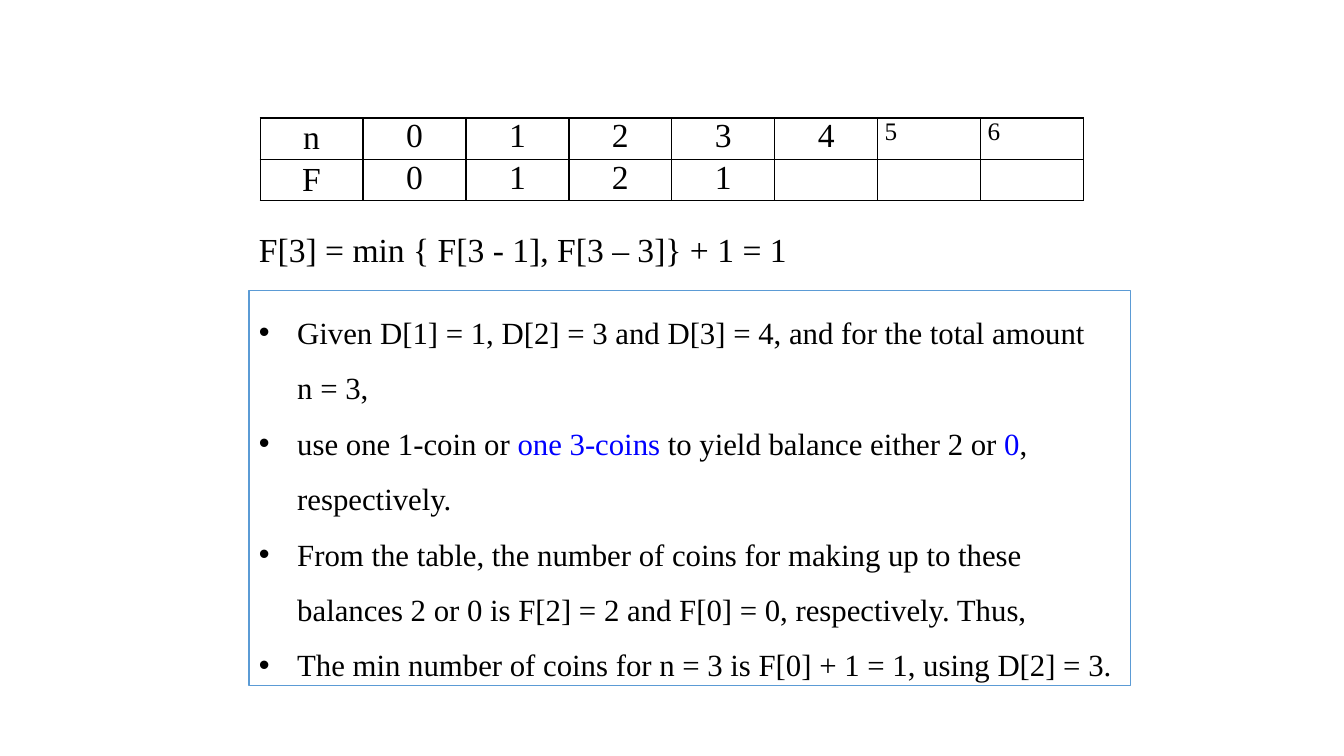
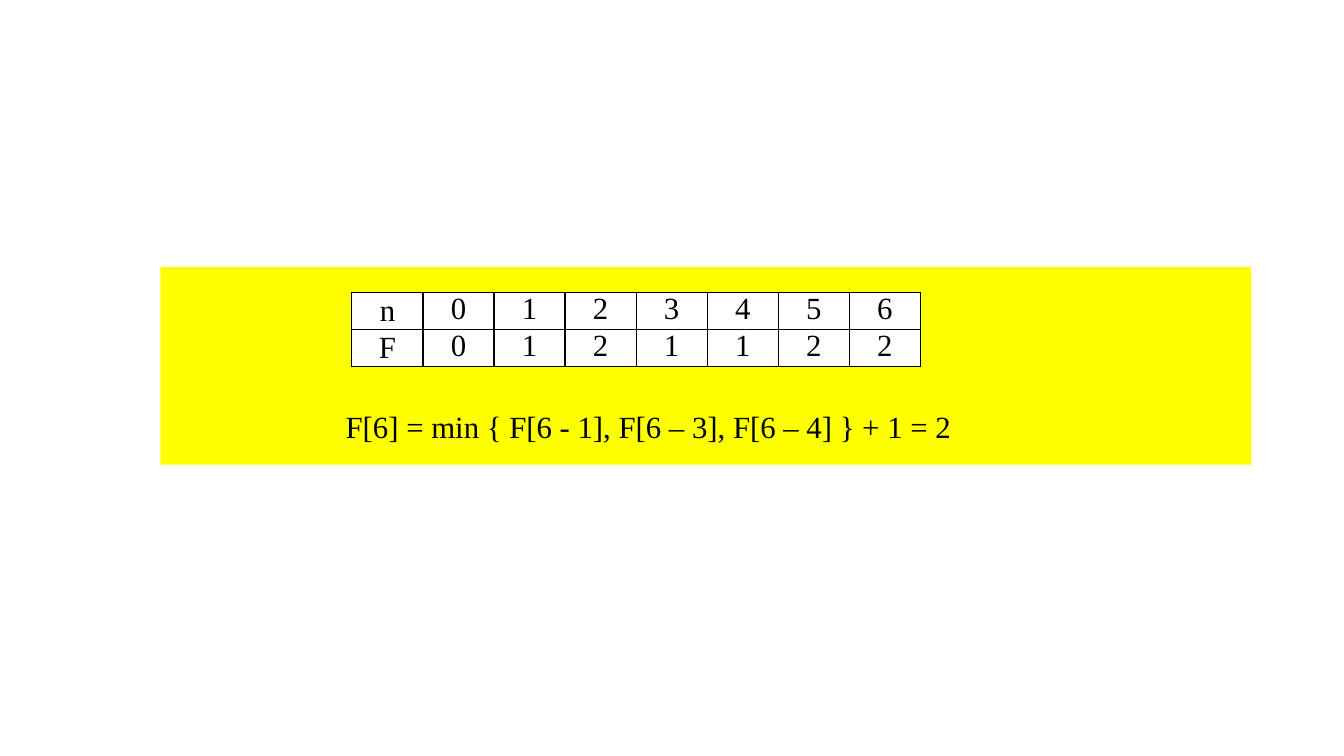
from lxml import etree
from pptx import Presentation
from pptx import util as u
from pptx.dml.color import RGBColor
from pptx.enum import shapes, text
from pptx.oxml import ns

PX = 9144
FONT = "Times New Roman"
BLACK = RGBColor(0, 0, 0)
WHITE = RGBColor(255, 255, 255)
BLUE = RGBColor(0, 0, 255)
YELLOW = RGBColor(255, 255, 0)
FRAME_BLUE = RGBColor(0x5B, 0x9B, 0xD5)

TOP, MIDDLE = text.MSO_ANCHOR.TOP, text.MSO_ANCHOR.MIDDLE
LEFT, CENTER = text.PP_ALIGN.LEFT, text.PP_ALIGN.CENTER
CELL_FORMAT = {"margin_left": 7 * PX, "margin_right": 7 * PX,
               "margin_top": 0, "margin_bottom": 0}
PLAIN_TABLE = {"first_row": False, "horz_banding": False}

AMOUNTS = ["n", *"0123456"]
REASONING = [
    [("Given D[1] = 1, D[2] = 3 and D[3] = 4, and for the total amount\nn = 3,", BLACK)],
    [("use one 1-coin or ", BLACK), ("one 3-coins ", BLUE),
     ("to yield balance either 2 or ", BLACK), ("0", BLUE), (", respectively.", BLACK)],
    [("From the table, the number of coins for making up to these balances "
      "2 or 0 is F[2] = 2 and F[0] = 0, respectively. Thus,", BLACK)],
    [("The min number of coins for n = 3 is F[0] + 1 = 1, using D[2] = 3.", BLACK)],
]


def apply(target, values):
    """Set each attribute of the target from a dict."""
    for name, value in values.items():
        setattr(target, name, value)


def emu(*lengths):
    """Turn px lengths into EMU."""
    return [u.Emu(length * PX) for length in lengths]


def write(paragraph, words, size, colour=BLACK):
    """Add words to a paragraph, with a line break at each newline."""
    for number, line in enumerate(words.split("\n")):
        if number:
            paragraph.add_line_break()
        run = paragraph.add_run()
        run.text = line
        apply(run.font, {"name": FONT, "size": u.Pt(size)})
        run.font.color.rgb = colour


def add_borders(cell):
    """Draw a thin black line on all sides of a cell."""
    properties = cell._tc.get_or_add_tcPr()
    for side in ("a:lnL", "a:lnR", "a:lnT", "a:lnB"):
        line = etree.SubElement(properties, ns.qn(side), w=str(u.Pt(1)))
        fill = etree.SubElement(line, ns.qn("a:solidFill"))
        etree.SubElement(fill, ns.qn("a:srgbClr"), val=str(BLACK))


def add_coin_table(slide, box, counts, size, pending=()):
    """Place the table of minimum coin counts; pending amounts are small and left."""
    rows = [AMOUNTS, ["F", *counts]]
    left, top, width, height = box
    table = slide.shapes.add_table(len(rows), len(AMOUNTS), *emu(*box)).table
    apply(table, PLAIN_TABLE)
    for column in table.columns:
        column.width = u.Emu(width * PX // len(AMOUNTS))
    for r, values in enumerate(rows):
        table.rows[r].height = u.Emu(height * PX // len(rows))
        for c, value in enumerate(values):
            cell = table.cell(r, c)
            add_borders(cell)
            apply(cell, CELL_FORMAT)
            cell.vertical_anchor = TOP if c else MIDDLE
            cell.fill.solid()
            cell.fill.fore_color.rgb = WHITE
            if value:
                waiting = value in pending
                entry = cell.text_frame.paragraphs[0]
                entry.alignment = LEFT if waiting else CENTER
                write(entry, value, 18 if waiting else size)


def add_formula(slide, box, words, size):
    """Place the recurrence on one line."""
    frame = slide.shapes.add_textbox(*emu(*box)).text_frame
    frame.word_wrap = False
    write(frame.paragraphs[0], words, size)


def add_rectangle(slide, box, fill=None, outline=None):
    """Place a flat rectangle with an optional fill and outline."""
    panel = slide.shapes.add_shape(shapes.MSO_SHAPE.RECTANGLE, *emu(*box))
    panel.shadow.inherit = False
    for part, colour in ((panel.fill, fill), (panel.line.fill, outline)):
        if colour is None:
            part.background()
        else:
            part.solid()
            part.fore_color.rgb = colour
    return panel


def add_reasoning(slide, box, points, size):
    """Place the outlined panel of bulleted reasoning."""
    panel = add_rectangle(slide, box, outline=FRAME_BLUE)
    panel.line.width = u.Pt(0.75)
    frame = panel.text_frame
    apply(frame, {"word_wrap": True, "vertical_anchor": TOP})
    indent = 38 * PX
    for number, point in enumerate(points):
        paragraph = frame.add_paragraph() if number else frame.paragraphs[0]
        apply(paragraph, {"alignment": LEFT, "line_spacing": 1.5})
        properties = paragraph._p.get_or_add_pPr()
        properties.set("marL", str(indent))
        properties.set("indent", str(-indent))
        etree.SubElement(properties, ns.qn("a:buFont"), typeface="Arial")
        etree.SubElement(properties, ns.qn("a:buChar"), char="•")
        for words, colour in point:
            write(paragraph, words, size, colour)


def build_step_slide(slide):
    """Show how F[3] is found."""
    add_coin_table(slide, (258, 117, 817, 82), [*"0121", "", "", ""], 24, pending="56")
    add_formula(slide, (247, 222, 571, 50), "F[3] = min { F[3 - 1], F[3 – 3]} + 1 = 1", 24)
    add_reasoning(slide, (247, 288, 874, 392), REASONING, 22)


def build_result_slide(slide):
    """Show the finished table and F[6] on a yellow band."""
    left, top, width, height = 159, 265, 1082, 196
    add_rectangle(slide, (left, top, width, height), fill=YELLOW)
    add_coin_table(slide, (left + 190, top + 25, 564, 68), "0121122", 22)
    add_formula(slide, (left + 174, top + 135, 628, 47),
                "F[6] = min { F[6 - 1], F[6 – 3], F[6 – 4] } + 1 = 2", 22)


def main():
    """Build and save the presentation."""
    deck = Presentation()
    slide_width, slide_height = emu(1333, 750)
    apply(deck, {"slide_width": slide_width, "slide_height": slide_height})
    for build in (build_step_slide, build_result_slide):
        build(deck.slides.add_slide(deck.slide_layouts[6]))
    deck.save("out.pptx")


if __name__ == "__main__":
    main()
